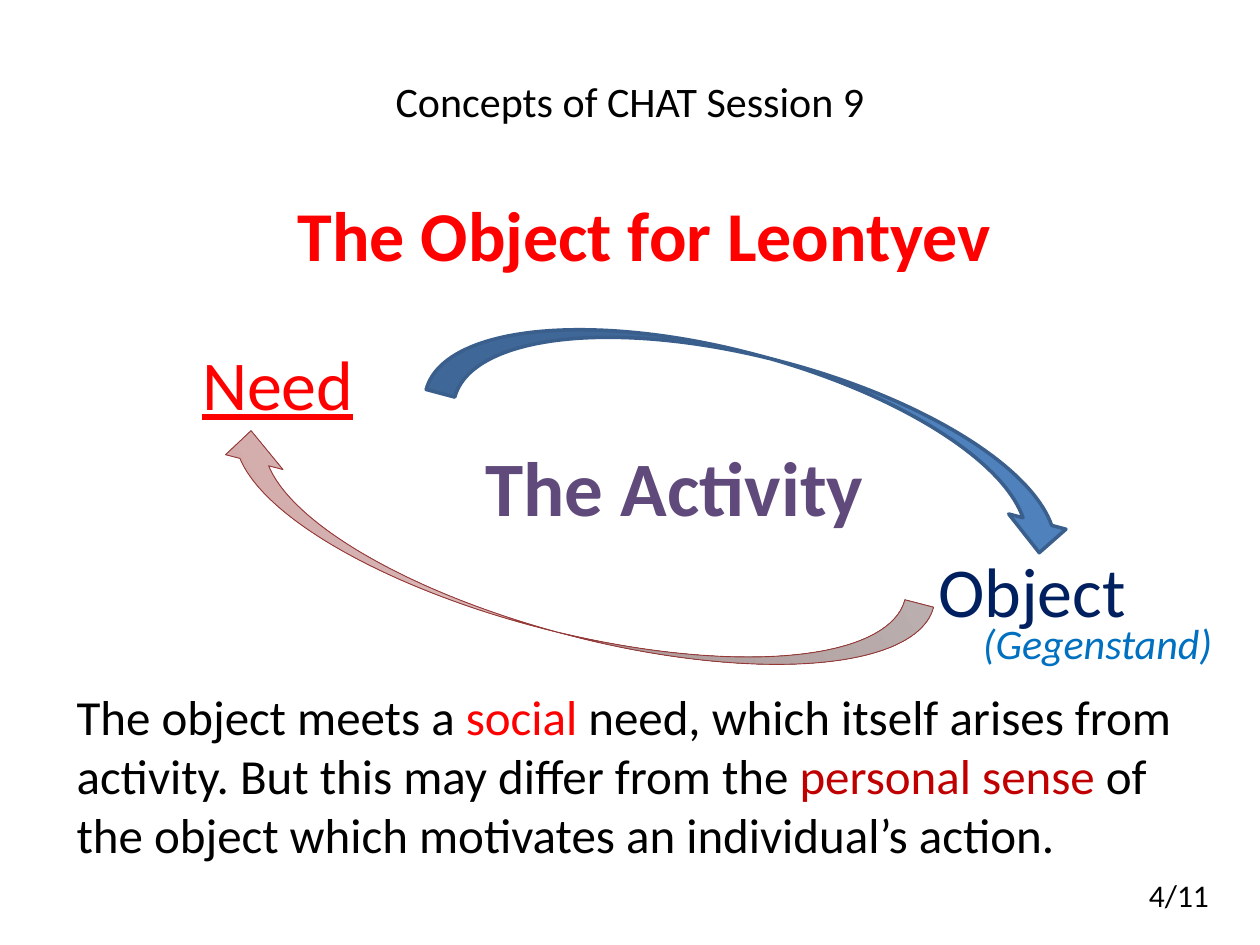
from lxml import etree
from pptx import Presentation
from pptx.dml.color import RGBColor
from pptx.enum.shapes import MSO_SHAPE
from pptx.enum.text import MSO_ANCHOR, PP_ALIGN
from pptx.oxml import parse_xml
from pptx.util import Inches, Pt

LEFT, CENTER, RIGHT = PP_ALIGN.LEFT, PP_ALIGN.CENTER, PP_ALIGN.RIGHT
CURVED_ARROW = MSO_SHAPE.CURVED_LEFT_ARROW
MIDDLE = MSO_ANCHOR.MIDDLE
DRAWING_NS = "http://schemas.openxmlformats.org/drawingml/2006/main"
FONT = "Calibri"
COLORS = {
    "black": "000000", "red": "FF0000", "dark_red": "C00000", "navy": "002060",
    "purple": "604A7B", "sky": "0070C0", "blue": "4F81BD", "blue_line": "3A5F8C",
    "rose_line": "953735",
}
ROSE_STOPS = [(0, "CB9A9A"), (50, "DDC2C2"), (100, "EEE2E1")]


def color(name):
    return RGBColor.from_string(COLORS[name])


def write(shape, parts, size, align, bold=False, italic=False, underline=False, before=0):
    """Fill a shape with one paragraph made of (text, colour) parts."""
    shape.text_frame.word_wrap = True
    paragraph = shape.text_frame.paragraphs[0]
    paragraph.alignment = align
    paragraph.space_before = Pt(before)
    for text, color_name in parts:
        run = paragraph.add_run()
        run.text = text
        font = run.font
        font.name, font.size = FONT, Pt(size)
        font.bold, font.italic, font.underline = bold, italic, underline
        font.color.rgb = color(color_name)


presentation = Presentation()
presentation.slide_width, presentation.slide_height = Inches(10), Inches(7.5)
slide = presentation.slides.add_slide(presentation.slide_layouts[5])

# Title
title = slide.shapes.title
title.left, title.top = Inches(0.75), Inches(0.29)
title.width, title.height = Inches(8.5), Inches(1.02)
title.text_frame.vertical_anchor = MIDDLE
write(title, [("Concepts of CHAT Session 9", "black")], 24, CENTER)

# Curved arrows between need and object
arrows = []
for left, top, width, height, rotation, line_color, line_width in [
    (5.58, 0.68, 0.94, 5.27, 284.9, "blue_line", 2),
    (4, 1.63, 0.94, 5.83, 284.5, "rose_line", 0.5),
]:
    arrow = slide.shapes.add_shape(
        CURVED_ARROW, Inches(left), Inches(top), Inches(width), Inches(height))
    arrow.rotation = rotation
    arrow.shadow.inherit = False
    arrow.fill.solid()
    arrow.fill.fore_color.rgb = color("blue")
    arrow.line.color.rgb = color(line_color)
    arrow.line.width = Pt(line_width)
    arrows.append(arrow)

# The return arrow is flipped both ways and has a three-stop gradient
properties = arrows[1]._element.spPr
for flip in ("flipH", "flipV"):
    properties.xfrm.set(flip, "1")
stops = "".join(
    f'<a:gs pos="{position * 1000}"><a:srgbClr val="{value}"/></a:gs>'
    for position, value in ROSE_STOPS)
gradient = parse_xml(
    f'<a:gradFill xmlns:a="{DRAWING_NS}" rotWithShape="1"><a:gsLst>{stops}</a:gsLst>'
    f'<a:lin ang="{225 * 60000}" scaled="0"/></a:gradFill>')
solid = properties.find(etree.QName(DRAWING_NS, "solidFill").text)
properties.replace(solid, gradient)

# Labels, explanation and page number
explanation = [
    ("The object meets a ", "black"),
    ("social", "red"),
    (" need, which itself arises from activity. But this may differ from the ", "black"),
    ("personal sense ", "dark_red"),
    ("of the object which motivates an individual’s action.", "black"),
]
for left, top, width, height, parts, size, align, style in [
    (1.06, 1.47, 8.11, 0.87, [("The Object for Leontyev", "red")], 40, CENTER,
     {"bold": True, "before": 2}),
    (0.75, 2.65, 2.91, 0.87, [("Need", "red")], 40, CENTER,
     {"underline": True, "before": 2}),
    (7.05, 4.3, 2.28, 0.87, [("Object", "navy")], 40, CENTER, {"before": 2}),
    (3.74, 3.44, 3.23, 0.84, [("The Activity", "purple")], 44, CENTER, {"bold": True}),
    (0.51, 5.4, 9.06, 1.51, explanation, 28, LEFT, {}),
    (7.28, 4.85, 2.44, 0.5, [("(Gegenstand)", "sky")], 24, RIGHT, {"italic": True}),
    (9.02, 6.9, 0.79, 0.4, [("4/11", "black")], 18, LEFT, {}),
]:
    box = slide.shapes.add_textbox(Inches(left), Inches(top), Inches(width), Inches(height))
    write(box, parts, size, align, **style)

presentation.save("out.pptx")
